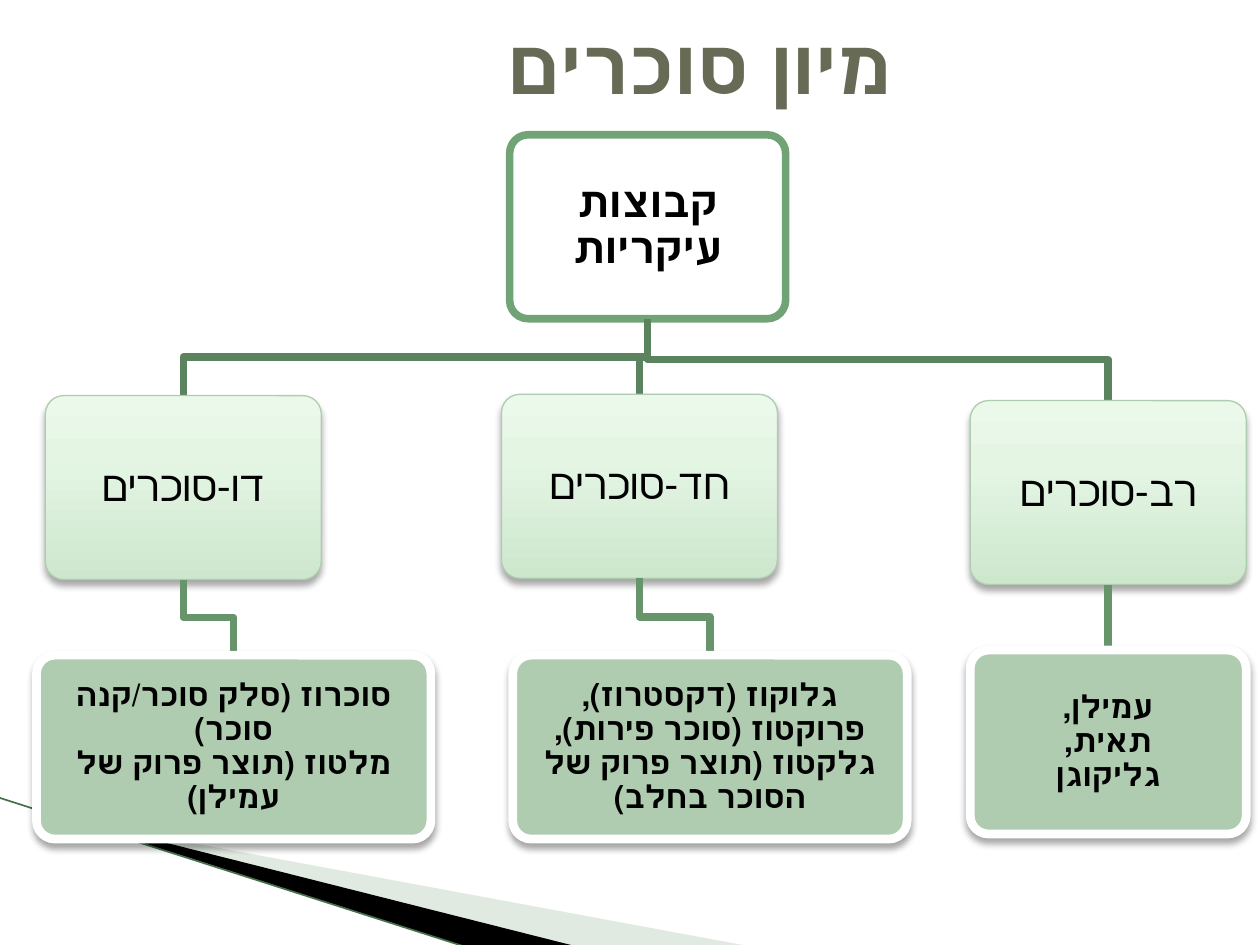
import pptx
import pptx.dml.color
import pptx.enum.shapes
import pptx.enum.text
import pptx.oxml
import pptx.oxml.ns
import pptx.util
from pptx.util import Inches

NAMESPACE = pptx.oxml.ns.nsdecls("a")
HEBREW_FONT = "DejaVu Sans Mono"
BOX_HEIGHT = 1.46
GROUP_WIDTH = 2.19
ROOT_CENTER, ROOT_TOP = 5.14, 1.07
GROUP_GRADIENT = [(0, "CDE7CD"), (65, "E4F5E4"), (100, "EBF9EB")]
BRANCHES = [
    ("דו-סוכרים", 0.36, 3.14, 0.29, 5.2, 3.13,
     ["סוכרוז (סלק סוכר/קנה סוכר)", "מלטוז (תוצר פרוק של עמילן)"]),
    ("חד-סוכרים", 3.98, 3.13, 4.07, 5.2, 3.13,
     ["גלוקוז (דקסטרוז),", "פרוקטוז (סוכר פירות),", "גלקטוז (תוצר פרוק של הסוכר בחלב)"]),
    ("רב-סוכרים", 7.7, 3.18, 7.7, 5.16, GROUP_WIDTH,
     ["עמילן,", "תאית,", "גליקוגן"]),
]


def color(value):
    return pptx.dml.color.RGBColor.from_string(value)


class SlideBuilder:
    """Draws the elements of the sugar chart on one slide in a shared style."""

    def __init__(self, slide):
        self.slide = slide

    def style_line(self, line, value, width):
        line.color.rgb = color(value)
        line.width = pptx.util.Pt(width)

    def text(self, shape, lines, size, font, bold, inset=0.1, value="000000", spacing=None):
        frame = shape.text_frame
        frame.word_wrap = True
        frame.vertical_anchor = pptx.enum.text.MSO_ANCHOR.MIDDLE
        frame.margin_left = frame.margin_right = Inches(inset)
        frame.margin_top = frame.margin_bottom = Inches(inset)
        paragraph = frame.paragraphs[0]
        paragraph.alignment = pptx.enum.text.PP_ALIGN.CENTER
        paragraph._p.get_or_add_pPr().set("rtl", "1")
        if spacing:
            paragraph.line_spacing = spacing
        for index, content in enumerate(lines):
            if index:
                paragraph.add_line_break()
            run = paragraph.add_run()
            run.text = content
            run.font.size = pptx.util.Pt(size)
            run.font.bold = bold
            run.font.color.rgb = color(value)
            run.font.name = font

    def title(self, content, left, top, width, height):
        shape = self.slide.shapes.add_textbox(
            Inches(left), Inches(top), Inches(width), Inches(height))
        self.text(shape, [content], 44, HEBREW_FONT, True, 0.05, "676A55")

    def box(self, left, top, width, fill, line, line_width, shadow=True):
        shape = self.slide.shapes.add_shape(
            pptx.enum.shapes.MSO_SHAPE.ROUNDED_RECTANGLE,
            Inches(left), Inches(top), Inches(width), Inches(BOX_HEIGHT))
        shape.adjustments[0] = 0.1
        if isinstance(fill, str):
            shape.fill.solid()
            shape.fill.fore_color.rgb = color(fill)
        else:
            self.gradient(shape, fill)
        self.style_line(shape.line, line, line_width)
        shape.shadow.inherit = False
        if shadow:
            shape._element.spPr.find(pptx.oxml.ns.qn("a:effectLst")).append(pptx.oxml.parse_xml(
                f'<a:outerShdw {NAMESPACE} blurRad="50800" dist="38100" dir="5400000" '
                'rotWithShape="0"><a:srgbClr val="000000"><a:alpha val="35000"/>'
                '</a:srgbClr></a:outerShdw>'))
        return shape

    def gradient(self, shape, stops):
        shape.fill.gradient()
        gradient = shape._element.spPr.find(pptx.oxml.ns.qn("a:gradFill"))
        stop_xml = "".join(
            f'<a:gs pos="{position * 1000}"><a:srgbClr val="{value}"/></a:gs>'
            for position, value in stops)
        gradient.getparent().replace(gradient, pptx.oxml.parse_xml(
            f'<a:gradFill {NAMESPACE} rotWithShape="1"><a:gsLst>{stop_xml}</a:gsLst>'
            '<a:lin ang="16200000" scaled="0"/></a:gradFill>'))

    def outline(self, points, closed):
        corners = [(Inches(x), Inches(y)) for x, y in points]
        builder = self.slide.shapes.build_freeform(*corners[0], scale=1.0)
        builder.add_line_segments(corners[1:], close=closed)
        shape = builder.convert_to_shape()
        shape.shadow.inherit = False
        return shape

    def wedge(self, points, fill, opacity=100):
        shape = self.outline(points, True)
        shape.fill.solid()
        shape.fill.fore_color.rgb = color(fill)
        shape.line.fill.background()
        if opacity < 100:
            shape._element.spPr.find(".//" + pptx.oxml.ns.qn("a:srgbClr")).append(
                pptx.oxml.parse_xml(f'<a:alpha {NAMESPACE} val="{opacity * 1000}"/>'))

    def straight(self, start, end, value, width):
        connector = self.slide.shapes.add_connector(
            pptx.enum.shapes.MSO_CONNECTOR.STRAIGHT,
            *(Inches(length) for length in (*start, *end)))
        self.style_line(connector.line, value, width)
        connector._element.spPr.append(pptx.oxml.parse_xml(f"<a:effectLst {NAMESPACE}/>"))

    def link(self, start, end, value):
        middle = (start[1] + end[1]) / 2
        bends = [(start[0], middle), (end[0], middle)] if start[0] != end[0] else []
        shape = self.outline([start, *bends, end], False)
        shape.fill.background()
        self.style_line(shape.line, value, 4.33)


def main():
    presentation = pptx.Presentation()
    presentation.slide_width = Inches(10)
    presentation.slide_height = Inches(7.5)
    builder = SlideBuilder(presentation.slides.add_slide(presentation.slide_layouts[6]))

    builder.wedge([(0.55, 6.51), (5.95, 7.51), (4.56, 7.51), (0.55, 6.5)], "B3CBB5", 40)
    builder.wedge([(0.53, 6.49), (4.57, 7.51), (3.72, 7.52), (0.54, 6.5)], "000000")
    builder.straight((-0.01, 6.33), (3.71, 7.52), "457049", 0.95)
    builder.title("מיון סוכרים", 1.77, 0.04, 7.57, 0.93)

    root = builder.box(ROOT_CENTER - GROUP_WIDTH / 2, ROOT_TOP, GROUP_WIDTH,
                       "FFFFFF", "72A376", 4.33, shadow=False)
    builder.text(root, ["קבוצות עיקריות"], 24, HEBREW_FONT, True, spacing=0.9)

    for name, left, top, detail_left, detail_top, detail_width, lines in BRANCHES:
        center = left + GROUP_WIDTH / 2
        detail_center = detail_left + detail_width / 2
        builder.link((ROOT_CENTER, ROOT_TOP + BOX_HEIGHT), (center, top), "5B835E")
        group = builder.box(left, top, GROUP_WIDTH, GROUP_GRADIENT, "B0CCB0", 0.75)
        builder.text(group, [name], 24, HEBREW_FONT, False, spacing=0.9)
        builder.link((center, top + BOX_HEIGHT), (detail_center, detail_top), "67946B")
        detail = builder.box(detail_left, detail_top, detail_width, "B0CCB0", "FFFFFF", 5)
        builder.text(detail, lines, 18, "Arial", True, inset=0.07, spacing=0.9)

    presentation.save("out.pptx")


if __name__ == "__main__":
    main()
